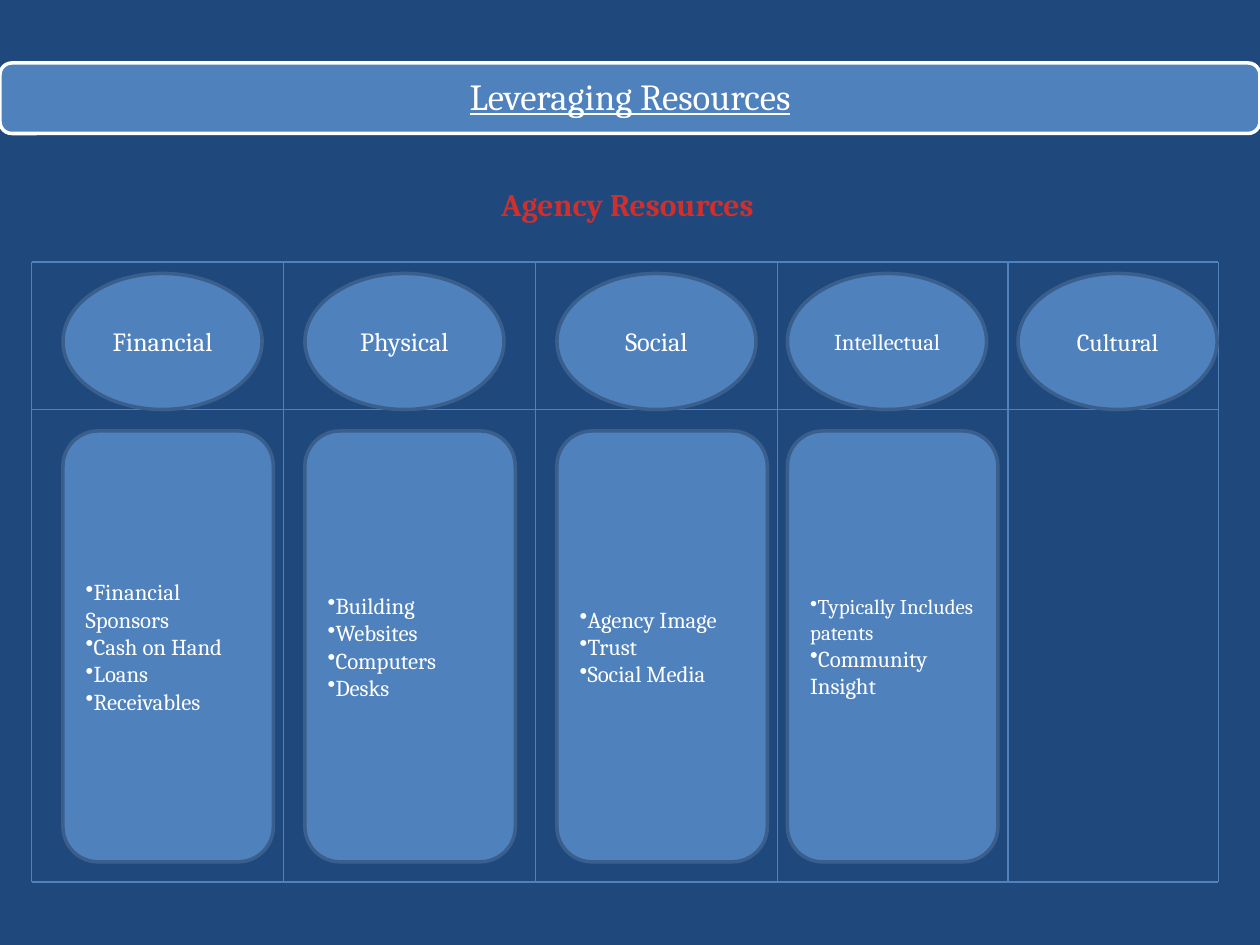
from dataclasses import dataclass

from lxml.etree import SubElement
from pptx import Presentation
from pptx.dml.color import RGBColor
from pptx.enum.shapes import MSO_CONNECTOR, MSO_SHAPE
from pptx.enum.text import MSO_ANCHOR, MSO_AUTO_SIZE, PP_ALIGN
from pptx.oxml.ns import qn
from pptx.shapes.autoshape import Shape
from pptx.slide import Slide
from pptx.text.text import _Paragraph as Para
from pptx.util import Inches, Pt


@dataclass(frozen=True)
class Theme:
    face: str = "Cambria"
    back: str = "1F497D"
    fill: str = "4F81BD"
    edge: str = "3A5F8C"
    text: str = "FFFFFF"
    accent: str = "D02F2C"
    title: int = 21
    head: int = 18
    body: int = 13
    line: float = 2
    grid: float = 0.75


@dataclass(frozen=True)
class Item:
    text: str
    size: int = 13


@dataclass(frozen=True)
class Column:
    left: float
    name: str
    size: int
    items: tuple[Item, ...] = ()


THEME = Theme()

COLUMNS = (
    Column(0.5, "Financial", 15, (Item("Financial Sponsors"), Item("Cash on Hand"),
                                  Item("Loans"), Item("Receivables"))),
    Column(2.42, "Physical", 15, (Item("Building"), Item("Websites"),
                                  Item("Computers"), Item("Desks"))),
    Column(4.42, "Social", 15, (Item("Agency Image"), Item("Trust"),
                                Item("Social Media"))),
    Column(6.25, "Intellectual", 13, (Item("Typically Includes patents", 12),
                                      Item("Community Insight"))),
    Column(8.08, "Cultural", 14),
)

# Grid edges
XS = (0.25, 2.25, 4.25, 6.17, 8, 9.67)
YS = (2.08, 3.25, 7)

BANNER = (0, 0.5, 10, 0.56)


def style(para: Para, size: int, color: str = THEME.text,
          align: PP_ALIGN = PP_ALIGN.CENTER) -> None:
    para.alignment = align
    font = para.font
    font.name, font.size = THEME.face, Pt(size)
    font.color.rgb = RGBColor.from_string(color)


def add_box(slide: Slide, kind: MSO_SHAPE, left: float, top: float,
            width: float, height: float, edge: str = THEME.edge) -> Shape:
    box = slide.shapes.add_shape(kind, Inches(left), Inches(top),
                                 Inches(width), Inches(height))
    box.shadow.inherit = False
    box.fill.solid()
    box.fill.fore_color.rgb = RGBColor.from_string(THEME.fill)
    box.line.color.rgb = RGBColor.from_string(edge)
    box.line.width = Pt(THEME.line)
    box.text_frame.vertical_anchor = MSO_ANCHOR.MIDDLE
    return box


def add_line(slide: Slide, x1: float, y1: float, x2: float, y2: float) -> None:
    line = slide.shapes.add_connector(MSO_CONNECTOR.STRAIGHT, Inches(x1),
                                      Inches(y1), Inches(x2), Inches(y2))
    line.line.color.rgb = RGBColor.from_string(THEME.fill)
    line.line.width = Pt(THEME.grid)
    SubElement(line._element.spPr, qn("a:effectLst"))


def add_title(slide: Slide, text: str) -> None:
    title = slide.shapes.title
    title.left, title.top, title.width, title.height = map(Inches, BANNER)
    frame = title.text_frame
    frame.text = text
    frame.auto_size = MSO_AUTO_SIZE.NONE
    frame.vertical_anchor = MSO_ANCHOR.MIDDLE
    frame.margin_left = frame.margin_right = Inches(0.09)
    frame.margin_top = frame.margin_bottom = Inches(0.09)
    para = frame.paragraphs[0]
    para.line_spacing = 0.9
    style(para, THEME.title)
    para.font.underline = True
    # The banner goes behind the title text
    banner = add_box(slide, MSO_SHAPE.ROUNDED_RECTANGLE, *BANNER, edge=THEME.text)
    title._element.addprevious(banner._element)


def add_head(slide: Slide, text: str) -> None:
    box = slide.shapes.add_textbox(Inches(3.83), Inches(1.42),
                                   Inches(2.3), Inches(0.4))
    frame = box.text_frame
    frame.word_wrap = False
    frame.auto_size = MSO_AUTO_SIZE.SHAPE_TO_FIT_TEXT
    frame.text = text
    para = frame.paragraphs[0]
    style(para, THEME.head, THEME.accent)
    para.font.bold = True


def add_oval(slide: Slide, col: Column) -> None:
    oval = add_box(slide, MSO_SHAPE.OVAL, col.left, 2.17, 1.58, 1.08)
    oval.text_frame.text = col.name
    style(oval.text_frame.paragraphs[0], col.size)


def add_card(slide: Slide, col: Column) -> None:
    card = add_box(slide, MSO_SHAPE.ROUNDED_RECTANGLE, col.left, 3.42, 1.67, 3.42)
    frame = card.text_frame
    frame.text = "\n".join(item.text for item in col.items)
    for para, item in zip(frame.paragraphs, col.items):
        SubElement(para._p.get_or_add_pPr(), qn("a:buChar"), char="•")
        style(para, item.size, align=PP_ALIGN.LEFT)


def main() -> None:
    deck = Presentation()
    deck.slide_width, deck.slide_height = Inches(10), Inches(7.5)
    slide = deck.slides.add_slide(deck.slide_layouts[5])
    slide.background.fill.solid()
    slide.background.fill.fore_color.rgb = RGBColor.from_string(THEME.back)

    # Headings
    add_title(slide, "Leveraging Resources")
    add_head(slide, "Agency Resources")

    # Grid
    for x in XS:
        add_line(slide, x, YS[0], x, YS[-1])
    for y in YS:
        add_line(slide, XS[0], y, XS[-1], y)

    # Resource columns
    for col in COLUMNS:
        add_oval(slide, col)
        if col.items:
            add_card(slide, col)

    deck.save("out.pptx")


if __name__ == "__main__":
    main()
